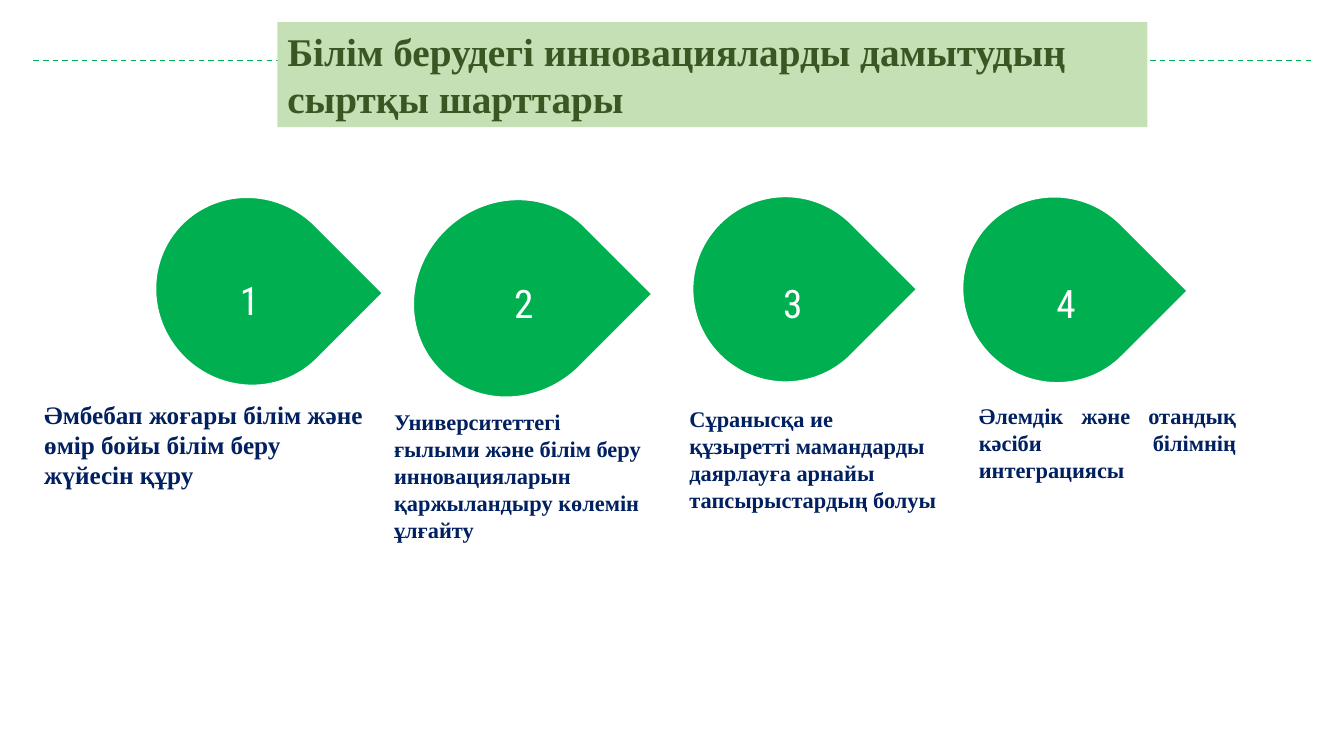
"""Build the slide on external conditions for innovation in education."""
from pptx import Presentation
from pptx import util as u
from pptx.dml.color import RGBColor
from pptx.enum import dml, shapes, text
from pptx.oxml.ns import qn
from lxml import etree

GREEN = RGBColor(0x00, 0xB0, 0x50)
PALE_GREEN = RGBColor(0xC5, 0xE0, 0xB4)
DARK_GREEN = RGBColor(0x38, 0x57, 0x23)
NAVY = RGBColor(0x00, 0x20, 0x60)
WHITE = RGBColor(0xFF, 0xFF, 0xFF)
SERIF, CONDENSED = "Times New Roman", "Roboto Condensed"
LEFT, CENTER, JUSTIFY = (text.PP_ALIGN.LEFT, text.PP_ALIGN.CENTER,
                         text.PP_ALIGN.JUSTIFY)

TITLE = "Білім берудегі инновацияларды дамытудың сыртқы шарттары"
CONDITIONS = [
    ((1.53, 1.97, 1.89, 1.84), (2.28, 2.55), (0.34, 3.91, 3.44, 1.01), 18, LEFT,
     "Әмбебап жоғары білім және өмір бойы білім беру жүйесін құру"),
    ((4.13, 1.95, 1.9, 2.02), (5, 2.58), (3.81, 4, 2.75, 1.45), 16, LEFT,
     "Университеттегі ғылыми және білім беру инновацияларын "
     "қаржыландыру көлемін ұлғайту"),
    ((6.87, 1.95, 1.84, 1.84), (7.67, 2.58), (6.74, 3.97, 2.67, 1.18), 16, LEFT,
     "Сұранысқа ие құзыретті мамандарды даярлауға арнайы "
     "тапсырыстардың болуы"),
    ((9.54, 1.96, 1.86, 1.83), (10.38, 2.58), (9.61, 3.94, 2.75, 0.91), 16, JUSTIFY,
     "Әлемдік және отандық кәсіби білімнің интеграциясы"),
]


class Deck:
    def __init__(self):
        self.prs = Presentation()
        self.prs.slide_width = u.Inches(13.33)
        self.prs.slide_height = u.Inches(7.5)
        self.s = self.prs.slides.add_slide(self.prs.slide_layouts[5])

    def set_text(self, sp, words, size, font, color, bold=True, align=LEFT, wrap=True):
        tf = sp.text_frame
        tf.text = words
        tf.word_wrap = wrap
        tf.auto_size = text.MSO_AUTO_SIZE.SHAPE_TO_FIT_TEXT
        p = tf.paragraphs[0]
        p.alignment = align
        p.font.size = u.Pt(size)
        p.font.name = font
        p.font.bold = bold
        p.font.color.rgb = color
        return p

    def title(self, words, box):
        sp = self.s.shapes.title
        sp.left, sp.top, sp.width, sp.height = map(u.Inches, box)
        sp.fill.solid()
        sp.fill.fore_color.rgb = PALE_GREEN
        sp.text_frame.vertical_anchor = text.MSO_ANCHOR.TOP
        self.set_text(sp, words, 28, SERIF, DARK_GREEN)
        sp.element.getparent().append(sp.element)

    def dashed_line(self, x1, x2, y):
        sp = self.s.shapes.add_connector(
            shapes.MSO_CONNECTOR.STRAIGHT, *map(u.Inches, (x1, y, x2, y)))
        sp.line.color.rgb = GREEN
        sp.line.width = u.Pt(1)
        sp.line.dash_style = dml.MSO_LINE.DASH
        etree.SubElement(sp.element.spPr, qn("a:effectLst"))

    def drop(self, box):
        sp = self.s.shapes.add_shape(shapes.MSO_SHAPE.TEAR, *map(u.Inches, box))
        sp.rotation = 45
        sp.shadow.inherit = False
        sp.fill.solid()
        sp.fill.fore_color.rgb = GREEN
        sp.line.color.rgb = WHITE
        sp.line.width = u.Pt(1)

    def textbox(self, box, words, *style, **options):
        sp = self.s.shapes.add_textbox(*map(u.Inches, box))
        return self.set_text(sp, words, *style, **options)

    def number(self, n, corner):
        p = self.textbox((*corner, 0.36, 0.71), str(n), 28, CONDENSED, WHITE,
                         bold=False, align=CENTER, wrap=False)
        p.line_spacing = 1.3


def main():
    deck = Deck()
    for x1, x2 in ((8.32, 13), (0.33, 5.01)):
        deck.dashed_line(x1, x2, 0.6)
    for n, (drop, corner, box, size, align, words) in enumerate(CONDITIONS, 1):
        deck.drop(drop)
        deck.number(n, corner)
        deck.textbox(box, words, size, SERIF, NAVY, align=align)
    deck.title(TITLE, (2.75, 0.22, 8.63, 1.04))
    deck.prs.save("out.pptx")


if __name__ == "__main__":
    main()
